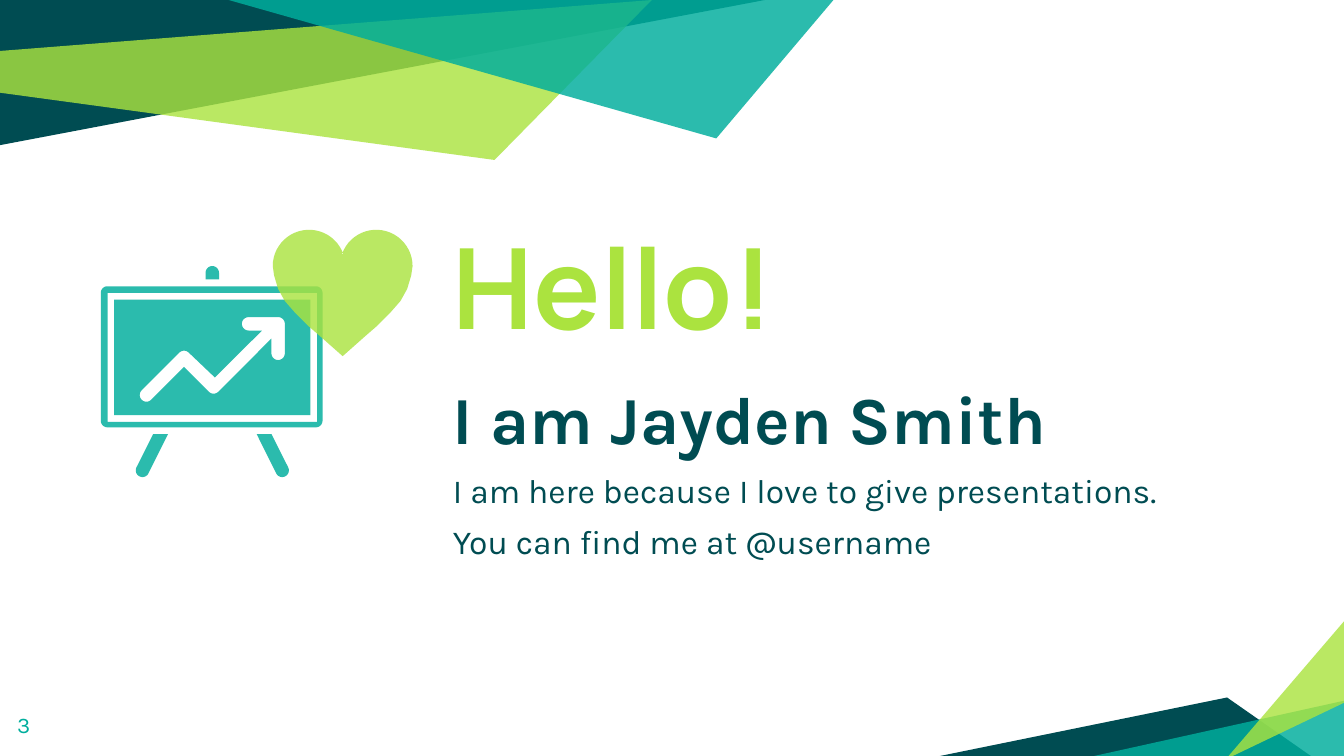
from math import cos, radians, sin

from lxml import etree
from pptx import Presentation
from pptx.dml.color import RGBColor
from pptx.enum.text import MSO_ANCHOR, MSO_AUTO_SIZE, PP_ALIGN
from pptx.oxml.ns import qn
from pptx.util import Inches, Pt

TOP, MIDDLE = MSO_ANCHOR.TOP, MSO_ANCHOR.MIDDLE
LEFT = PP_ALIGN.LEFT
NO_AUTOFIT = MSO_AUTO_SIZE.NONE

DARK = RGBColor(0x00, 0x4C, 0x52)
TEAL = RGBColor(0x00, 0xAE, 0x9D)
LIME = RGBColor(0xAB, 0xE3, 0x3F)
OPACITY = {DARK: 100, TEAL: 83, LIME: 81}  # percent


def arc(x, y, radius, start, end, steps=12):
    """Points on a circle, in degrees clockwise from the right."""
    angles = [radians(start + (end - start) * i / steps) for i in range(steps + 1)]
    return [(x + radius * cos(a), y + radius * sin(a)) for a in angles]


def mirror(points, axis):
    return [(2 * axis - x, y) for x, y in points]


def box(left, top, right, bottom):
    return [(left, top), (left, bottom), (right, bottom), (right, top)]


class SlideBuilder:
    heading_font = "Manrope"
    body_font = "Karla"

    def __init__(self, slide):
        self.slide = slide

    def polygon(self, color, *contours, shapes=None):
        """Filled outline; further contours cut holes."""
        shapes = self.slide.shapes if shapes is None else shapes
        builder = None
        for contour in contours:
            points = [(Inches(x), Inches(y)) for x, y in contour]
            if builder is None:
                builder = shapes.build_freeform(*points[0])
            else:
                builder.move_to(*points[0])
            builder.add_line_segments(points[1:], close=True)
        shape = builder.convert_to_shape()
        shape.shadow.inherit = False
        shape.line.fill.background()
        shape.fill.solid()
        shape.fill.fore_color.rgb = color
        if OPACITY[color] < 100:
            srgb = shape.fill._xPr.find(".//" + qn("a:srgbClr"))
            etree.SubElement(srgb, qn("a:alpha"), val=str(OPACITY[color] * 1000))

    def text(self, shape, position, lines, font, color, anchor, space_before=0):
        """Place a text shape; each line is (text, size, bold)."""
        shape.left, shape.top, shape.width, shape.height = map(Inches, position)
        frame = shape.text_frame
        frame.word_wrap = True
        frame.auto_size = NO_AUTOFIT
        frame.vertical_anchor = anchor
        frame.margin_left = frame.margin_right = Inches(0.1)
        frame.margin_top = frame.margin_bottom = Inches(0.1)
        frame.text = "\n".join(line[0] for line in lines)
        for paragraph, (_, size, bold) in zip(frame.paragraphs, lines):
            paragraph.alignment = LEFT
            paragraph.line_spacing = 1.0
            paragraph.space_before = Pt(space_before)
            run_font = paragraph.runs[0].font
            run_font.name = font
            run_font.size = Pt(size)
            run_font.bold = bold
            run_font.color.rgb = color

    def text_box(self, position, *style):
        shape = self.slide.shapes.add_textbox(*map(Inches, position))
        self.text(shape, position, *style)


def main():
    presentation = Presentation()
    # Widescreen, 16:9
    presentation.slide_width = Inches(10)
    presentation.slide_height = Inches(10) * 9 // 16
    # The title layout offers both the heading and the subtitle
    slide = presentation.slides.add_slide(presentation.slide_layouts[0])
    builder = SlideBuilder(slide)

    # Corner ribbons
    builder.polygon(DARK, [(0, 0), (0, 1.08), (5.69, 0)])
    builder.polygon(LIME, [(-0.01, 0.38), (0, 0.69), (3.68, 1.19), (4.85, 0)])
    builder.polygon(DARK, [(6.97, 5.63), (9.76, 5.63), (9.13, 5.19)])
    builder.polygon(TEAL, [(10.02, 5.21), (10.02, 5.65), (8.03, 5.65)])
    builder.polygon(LIME, [(10.02, 5.22), (10.02, 4.6), (9.12, 5.65)])
    builder.polygon(TEAL, [(1.7, 0), (5.33, 1.03), (6.21, -0.01), (6.09, 0)])

    # Heading and introduction
    builder.text(slide.shapes.title, (3.27, 1.48, 5.85, 1.27),
                 [("Hello!", 60, True)], builder.heading_font, LIME, MIDDLE)
    introduction = [
        ("I am Jayden Smith", 36, True),
        ("I am here because I love to give presentations.", 18, False),
        ("You can find me at @username", 18, False),
    ]
    builder.text(slide.placeholders[1], (3.27, 2.71, 5.85, 2.4),
                 introduction, builder.body_font, DARK, TOP, 6)

    # Presentation board: frame, pin, legs, and panel with a cut-out arrow
    board = slide.shapes.add_group_shape().shapes
    radius = 0.05
    frame = (arc(0.8, 2.18, radius, 180, 270) + arc(2.35, 2.18, radius, 270, 360)
             + arc(2.35, 3.13, radius, 0, 90) + arc(0.8, 3.13, radius, 90, 180))
    pin = arc(1.58, 2.03, radius, 180, 360) + [(1.63, 2.08), (1.53, 2.08)]
    leg = [(1.25, 3.23), (1.14, 3.23)] + arc(1.06, 3.5, radius, 207, 27)
    arrow = (arc(2.07, 2.41, radius, 270, 360) + arc(2.07, 2.63, radius, 0, 180)
             + [(2.02, 2.52)] + arc(1.59, 2.88, radius, 45, 135)
             + [(1.37, 2.73)] + arc(1.09, 2.94, radius, 45, 225)
             + arc(1.37, 2.66, radius, 225, 315)
             + [(1.6, 2.81), (1.95, 2.46)] + arc(1.85, 2.41, radius, 90, 270))
    board_parts = [
        (box(0.8, 2.18, 2.36, 3.14), frame),
        (pin,),
        (leg,),
        (mirror(leg, 1.58),),
        (arrow, box(0.85, 2.23, 2.31, 3.09)),
    ]
    for contours in board_parts:
        builder.polygon(TEAL, *contours, shapes=board)

    # Heart
    half = arc(2.8, 1.98, 0.27, 199, 360, 24) + [
        (3.06, 2.05), (3.03, 2.15), (2.98, 2.24), (2.91, 2.32),
        (2.8, 2.43), (2.72, 2.5), (2.55, 2.65)]
    builder.polygon(LIME, half + mirror(half, 2.55)[::-1])

    # Slide number
    builder.text_box((0.03, 5.19, 0.6, 0.43), [("3", 12, False)],
                     builder.body_font, TEAL, TOP)

    presentation.save("out.pptx")


if __name__ == "__main__":
    main()
